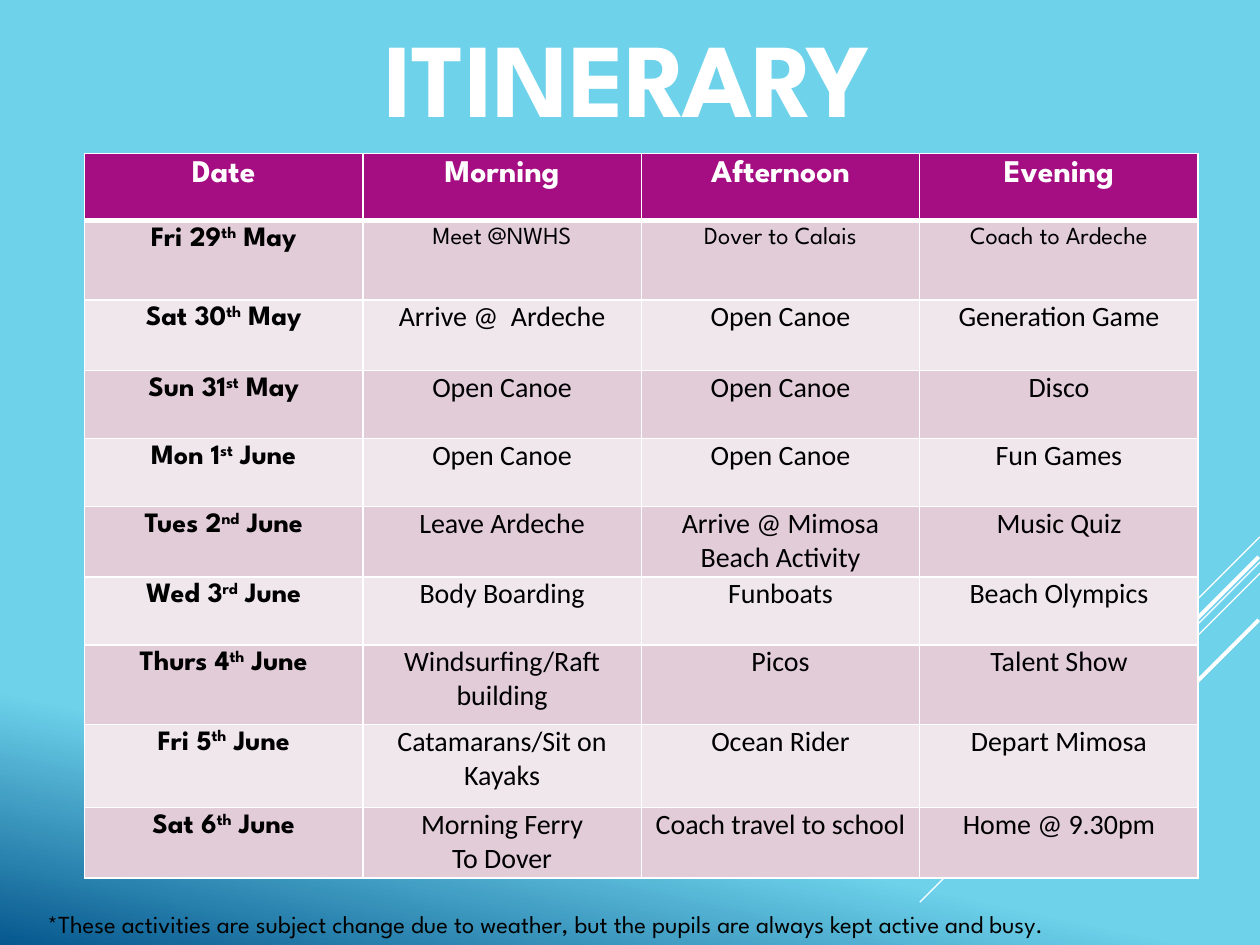
import pptx
import pptx.dml.color
import pptx.enum.shapes
import pptx.enum.text
import pptx.oxml
import pptx.oxml.ns
import pptx.util
from lxml import etree

Inches = pptx.util.Inches
Pt = pptx.util.Pt

HEADING_FONT, BODY_FONT = "League Spartan", "Calibri"
WHITE, BLACK, PURPLE = "FFFFFF", "000000", "A50E82"
BANDS = ("E1CCD8", "F0E7ED")
BACKGROUND_STOPS = ((0.79, "6ED2EB"), (1, "06588E"))

TITLE = "ITINERARY"
FOOTNOTE = ("*These activities are subject change due to weather, "
            "but the pupils are always kept active and busy.")
HEADERS = ("Date", "Morning", "Afternoon", "Evening")
DAYS = [
    (("Fri 29", "th", " May"), "Meet @NWHS", "Dover to Calais", "Coach to Ardeche"),
    (("Sat 30", "th", " May"), "Arrive @  Ardeche", "Open Canoe", "Generation Game"),
    (("Sun 31", "st", " May"), "Open Canoe", "Open Canoe", "Disco"),
    (("Mon 1", "st", " June"), "Open Canoe", "Open Canoe", "Fun Games"),
    (("Tues 2", "nd", " June"), "Leave Ardeche", "Arrive @ Mimosa\nBeach Activity", "Music Quiz"),
    (("Wed 3", "rd", " June"), "Body Boarding", "Funboats", "Beach Olympics"),
    (("Thurs 4", "th", " June"), "Windsurfing/Raft building", "Picos", "Talent Show"),
    (("Fri 5", "th", " June"), "Catamarans/Sit on Kayaks", "Ocean Rider", "Depart Mimosa"),
    (("Sat 6", "th", " June"), "Morning Ferry\nTo Dover", "Coach travel to school", "Home @ 9.30pm"),
]
ROW_HEIGHTS = (0.53, 0.63, 0.56, 0.54, 0.54, 0.56, 0.54, 0.63, 0.66, 0.56)
COLUMN_WIDTH = 2.21
DIAGONALS = [
    (10, 4.26, 0.83, 0.75),
    (10, 4.46, 2.7, 0.75),
    (10, 4.55, 1.72, 0.75),
    (9.99, 4.42, 1.57, 2.25),
    (9.99, 4.92, 1.14, 2.25),
]


def color(value):
    return pptx.dml.color.RGBColor.from_string(value)


def format_text(text_frame, size, font, text_color, bold=False, centered=True):
    for paragraph in text_frame.paragraphs:
        if centered:
            paragraph.alignment = pptx.enum.text.PP_ALIGN.CENTER
        for run in paragraph.runs:
            run.font.size = Pt(size)
            run.font.name = font
            run.font.bold = bold
            run.font.color.rgb = color(text_color)


def add_text(slide, text, box, size, text_color, **style):
    shape = slide.shapes.add_textbox(*map(Inches, box))
    text_frame = shape.text_frame
    text_frame.word_wrap = True
    text_frame.vertical_anchor = pptx.enum.text.MSO_ANCHOR.MIDDLE
    text_frame.text = text
    format_text(text_frame, size, HEADING_FONT, text_color, **style)


def add_diagonal(slide, right, top, reach, width):
    points = (right, top, right - reach, top + reach)
    line = slide.shapes.add_connector(
        pptx.enum.shapes.MSO_CONNECTOR.STRAIGHT, *map(Inches, points))
    line.line.color.rgb = color(WHITE)
    line.line.width = Pt(width)
    etree.SubElement(line._element.spPr, pptx.oxml.ns.qn("a:effectLst"))


def set_borders(cell, top, bottom):
    properties = cell._tc.get_or_add_tcPr()
    for side, width in (("L", 1), ("R", 1), ("T", top), ("B", bottom)):
        properties.append(pptx.oxml.parse_xml(
            f'<a:ln{side} {pptx.oxml.ns.nsdecls("a")} w="{Pt(width)}">'
            f'<a:solidFill><a:srgbClr val="{WHITE}"/></a:solidFill></a:ln{side}>'))


def fill_date(cell, parts):
    paragraph = cell.text_frame.paragraphs[0]
    for part in parts:
        paragraph.add_run().text = part
    paragraph.runs[1]._r.get_or_add_rPr().set("baseline", "30000")
    format_text(cell.text_frame, 16, HEADING_FONT, BLACK, bold=True)


def fill_activity(cell, text, first_day):
    cell.text_frame.text = text
    if first_day:
        format_text(cell.text_frame, 14, HEADING_FONT, BLACK)
        return
    cell.margin_left = cell.margin_right = Inches(0.07)
    cell.margin_top = cell.margin_bottom = 0
    format_text(cell.text_frame, 16, BODY_FONT, BLACK)


def add_itinerary(slide):
    rows = [HEADERS] + DAYS
    columns = len(HEADERS)
    table = slide.shapes.add_table(
        len(rows), columns, Inches(0.67), Inches(1.22),
        Inches(COLUMN_WIDTH * columns), Inches(sum(ROW_HEIGHTS))).table
    for column in table.columns:
        column.width = Inches(COLUMN_WIDTH)
    for row, height in zip(table.rows, ROW_HEIGHTS):
        row.height = Inches(height)
    for row_index, row in enumerate(rows):
        for column_index, content in enumerate(row):
            cell = table.cell(row_index, column_index)
            set_borders(cell, 3 if row_index == 1 else 1, 3 if row_index == 0 else 1)
            cell.fill.solid()
            cell.fill.fore_color.rgb = color(BANDS[(row_index - 1) % 2] if row_index else PURPLE)
            if row_index == 0:
                cell.text_frame.text = content
                format_text(cell.text_frame, 18, HEADING_FONT, WHITE, bold=True)
            elif column_index == 0:
                fill_date(cell, content)
            else:
                fill_activity(cell, content, row_index == 1)


def main():
    presentation = pptx.Presentation()
    presentation.slide_width, presentation.slide_height = Inches(10), Inches(7.5)
    slide = presentation.slides.add_slide(presentation.slide_layouts[6])
    fill = slide.background.fill
    fill.gradient()
    fill.gradient_angle = 360 - 102
    for stop, (position, value) in zip(fill.gradient_stops, BACKGROUND_STOPS):
        stop.position = position
        stop.color.rgb = color(value)
    for diagonal in DIAGONALS:
        add_diagonal(slide, *diagonal)
    add_text(slide, TITLE, (1.14, -0.03, 7.68, 1.25), 60, WHITE, bold=True)
    add_itinerary(slide)
    add_text(slide, FOOTNOTE, (0.28, 7.16, 9.92, 0.34), 14, BLACK, centered=False)
    presentation.save("out.pptx")


if __name__ == "__main__":
    main()
